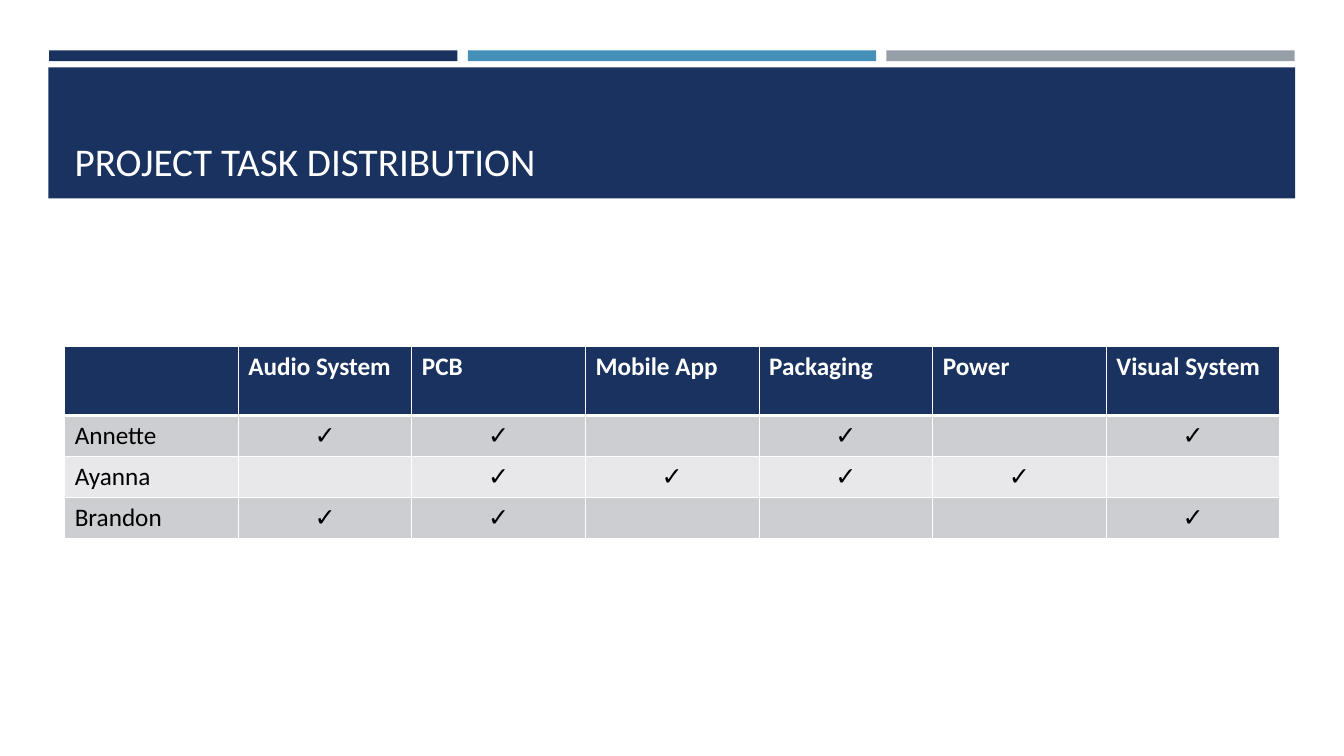
from lxml import etree
from pptx import Presentation
from pptx import util as u
from pptx.dml.color import RGBColor
from pptx.enum import shapes, text
from pptx.oxml.ns import qn

NAVY = RGBColor(0x1A, 0x32, 0x60)
BLUE = RGBColor(0x45, 0x90, 0xB8)
GRAY = RGBColor(0x96, 0x9F, 0xA7)
DARK_BAND = RGBColor(0xCD, 0xCE, 0xD2)
LIGHT_BAND = RGBColor(0xE8, 0xE8, 0xEA)
WHITE = RGBColor(0xFF, 0xFF, 0xFF)
BLACK = RGBColor(0, 0, 0)

TASKS = ["Audio System", "PCB", "Mobile App", "Packaging", "Power", "Visual System"]
ASSIGNMENTS = {
    "Annette": ["Audio System", "PCB", "Packaging", "Visual System"],
    "Ayanna": ["PCB", "Mobile App", "Packaging", "Power"],
    "Brandon": ["Audio System", "PCB", "Visual System"],
}


def add_block(left, top, width, height, color):
    block = slide.shapes.add_shape(
        shapes.MSO_SHAPE.RECTANGLE, u.Cm(left), u.Cm(top), u.Cm(width), u.Cm(height))
    block.shadow.inherit = False
    block.fill.solid()
    block.fill.fore_color.rgb = color
    block.line.fill.background()


def add_run(paragraph, words, size, color, bold=False):
    run = paragraph.add_run()
    run.text = words
    run.font.name = "Calibri"
    run.font.size = u.Pt(size)
    run.font.bold = bold
    run.font.color.rgb = color


deck = Presentation()
deck.slide_width = u.Cm(33.87)
deck.slide_height = u.Cm(19.05)
slide = deck.slides.add_slide(deck.slide_layouts[6])

for position, color in enumerate([NAVY, BLUE, GRAY]):
    add_block(1.24 + position * 10.55, 1.27, 10.29, 0.27, color)
add_block(1.22, 1.7, 31.42, 3.3, NAVY)

title = slide.shapes.add_textbox(u.Cm(1.63), u.Cm(1.96), u.Cm(30.63), u.Cm(2.82)).text_frame
title.word_wrap = True
title.vertical_anchor = text.MSO_ANCHOR.BOTTOM
add_run(title.paragraphs[0], "PROJECT TASK DISTRIBUTION", 28, WHITE)

rows = [[""] + TASKS]
for member, duties in ASSIGNMENTS.items():
    rows.append([member] + ["✓" if task in duties else "" for task in TASKS])

distribution = slide.shapes.add_table(
    len(rows), len(rows[0]), u.Cm(1.63), u.Cm(8.74), u.Cm(30.63), u.Cm(4.82)).table
for r, row in enumerate(rows):
    header = r == 0
    distribution.rows[r].height = u.Cm(1.73 if header else 1.03)
    band = NAVY if header else DARK_BAND if r % 2 else LIGHT_BAND
    for c, words in enumerate(row):
        cell = distribution.cell(r, c)
        properties = cell._tc.get_or_add_tcPr()
        widths = {"L": 1, "R": 1, "T": 3 if r == 1 else 1, "B": 3 if header else 1}
        for side, width in widths.items():
            border = etree.SubElement(properties, qn("a:ln" + side), w=str(u.Pt(width)))
            paint = etree.SubElement(border, qn("a:solidFill"))
            etree.SubElement(paint, qn("a:srgbClr"), val=str(WHITE))
        cell.fill.solid()
        cell.fill.fore_color.rgb = band
        paragraph = cell.text_frame.paragraphs[0]
        if words:
            add_run(paragraph, words, 18, WHITE if header else BLACK, header)
        if c and not header:
            paragraph.alignment = text.PP_ALIGN.CENTER

deck.save("out.pptx")
